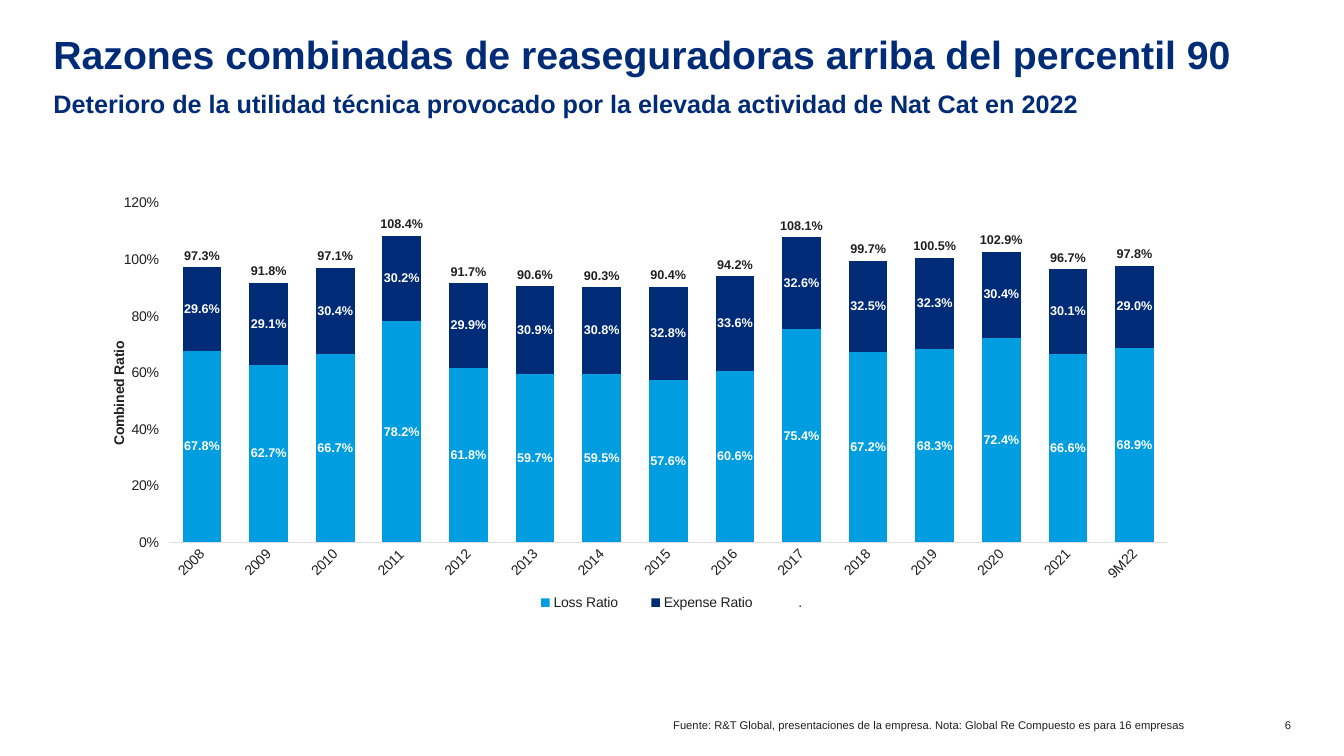
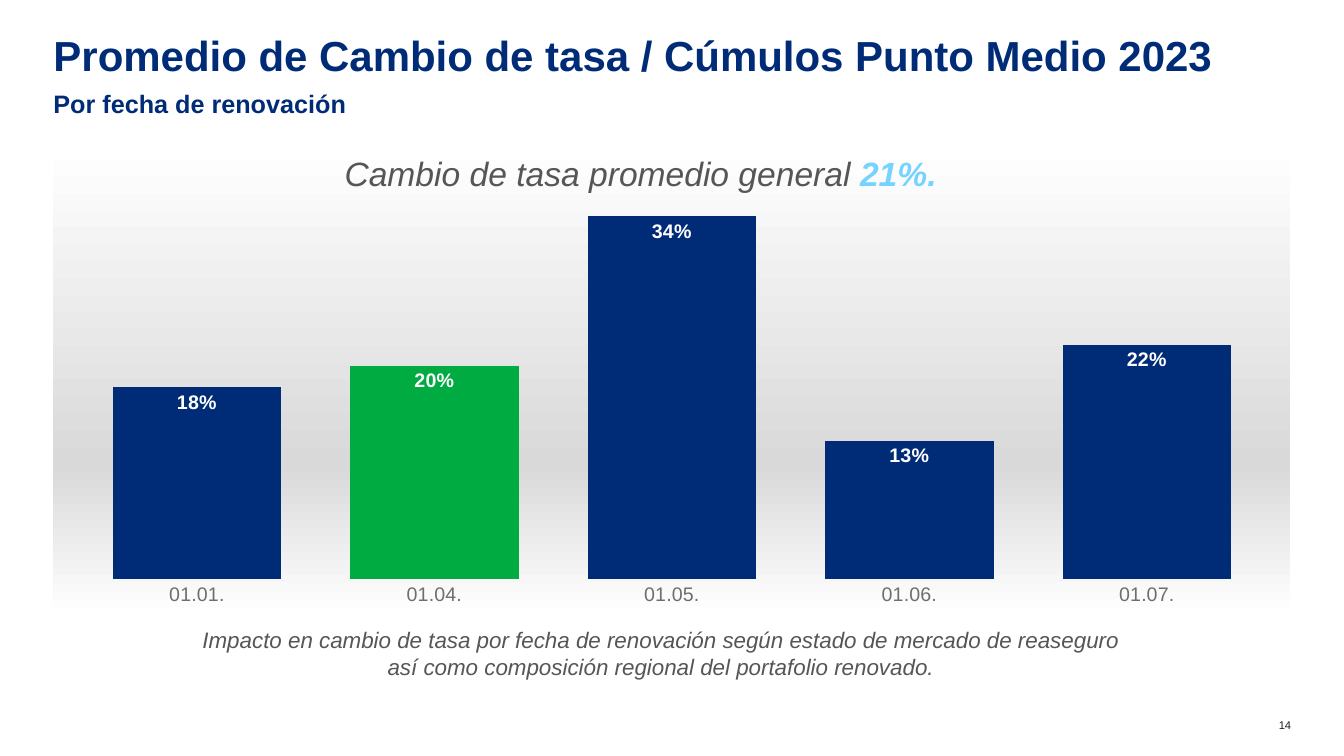
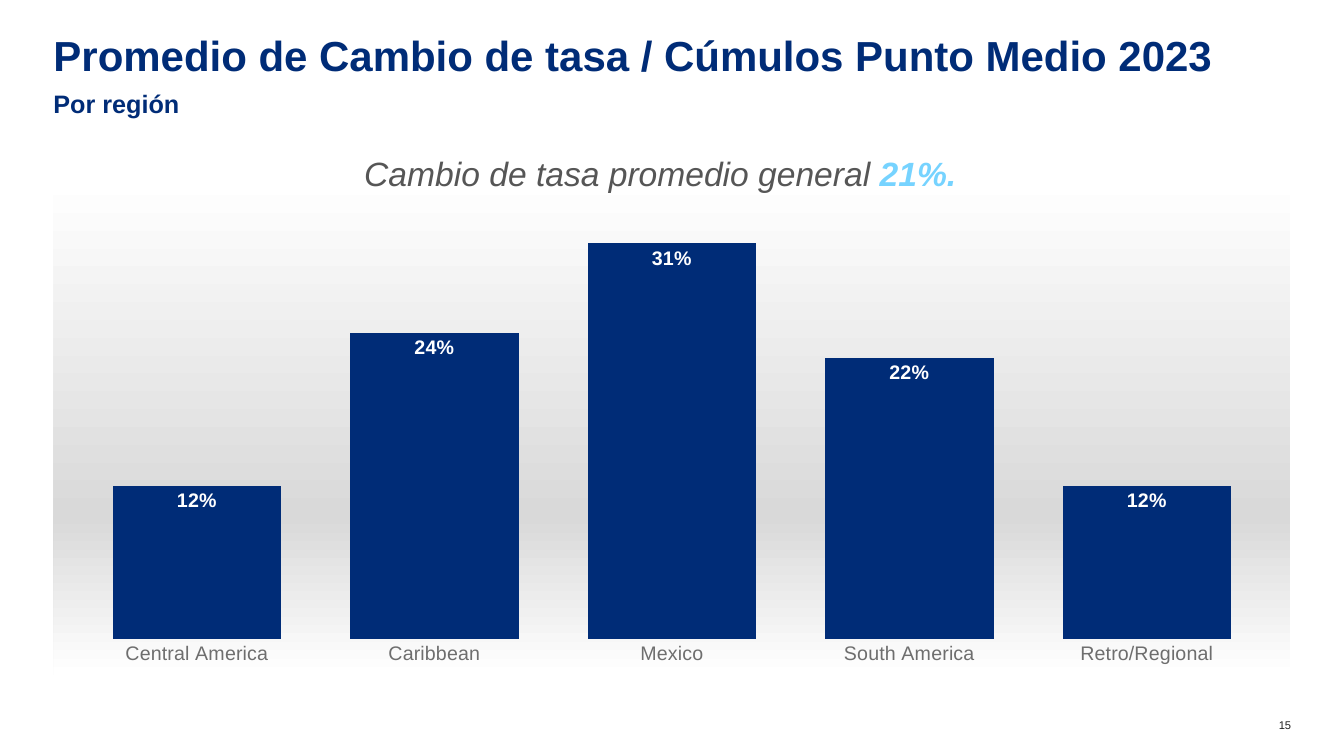
from dataclasses import dataclass
from typing import Any, NamedTuple

from lxml.etree import SubElement
from pptx import Presentation
from pptx.chart.data import CategoryChartData as ChartData
from pptx.dml.color import RGBColor as RGB
from pptx.enum.chart import XL_CHART_TYPE as CT
from pptx.enum.chart import XL_LABEL_POSITION as LP
from pptx.enum.chart import XL_LEGEND_POSITION as LEG
from pptx.enum.chart import XL_TICK_MARK as TICK
from pptx.enum.text import MSO_ANCHOR as ANCHOR
from pptx.enum.text import PP_ALIGN as ALIGN
from pptx.oxml import parse_xml
from pptx.oxml.ns import nsdecls, qn
from pptx.util import Pt


@dataclass(frozen=True)
class Theme:
    font: str = "Arial"
    navy: str = "002C77"
    sky: str = "009DE0"
    pale: str = "76D3FF"
    green: str = "00AC41"
    ink: str = "202020"
    gray: str = "565656"
    label: str = "6E6E6E"
    rule: str = "DEDEDE"
    band: str = "D9D9D9"
    white: str = "FFFFFF"
    subtitle: float = 18
    callout: float = 24
    note: float = 16
    chart: float = 14
    axis: float = 10
    value: float = 9
    small: float = 8


T = Theme()


class Box(NamedTuple):
    x: float
    y: float
    w: float
    h: float


class Run(NamedTuple):
    text: str
    size: float
    color: str
    bold: bool = False
    italic: bool = False


class Series(NamedTuple):
    name: str
    values: list[float]
    fill: str | None
    label: str
    position: Any


@dataclass(frozen=True)
class RatePage:
    number: int
    subtitle: str
    chart: Box
    plot: Box
    top: float
    callout: Box
    rates: dict[str, float]
    highlight: int | None = None
    note: str = ""


TITLE = Box(38.2, 28, 883.5, 38.9)
SUBTITLE = Box(38.2, 63.4, 884, 25.2)
NUMBER = Box(900, 513.4, 22.3, 9.4)
SOURCE = Box(473, 503.3, 373.7, 19.4)
NOTE = Box(139, 447.1, 666, 38.9)
COMBINED = Box(73.4, 129.6, 812.9, 311.8)

YEARS = [str(y) for y in range(2008, 2022)] + ["9M22"]
LOSS = [0.678, 0.627, 0.667, 0.782, 0.618, 0.597, 0.595, 0.576,
        0.606, 0.754, 0.672, 0.683, 0.724, 0.666, 0.689]
EXPENSE = [0.296, 0.291, 0.304, 0.302, 0.299, 0.309, 0.308, 0.328,
           0.336, 0.326, 0.325, 0.323, 0.304, 0.301, 0.29]
TOTAL = [0.973, 0.918, 0.971, 1.084, 0.917, 0.906, 0.903, 0.904,
         0.942, 1.081, 0.997, 1.005, 1.029, 0.967, 0.978]

RATE_TITLE = "Promedio de Cambio de tasa / Cúmulos Punto Medio 2023"
RATE_PAGES = [
    RatePage(
        14, "Por fecha de renovación",
        Box(38.2, 102.2, 883.5, 337), Box(0.02, 0.02, 0.96, 0.905), 0.4,
        Box(211.7, 109.4, 491.8, 28.8),
        {"01.01.": 0.18, "01.04.": 0.2, "01.05.": 0.34, "01.06.": 0.13, "01.07.": 0.22},
        highlight=1,
        note="Impacto en cambio de tasa por fecha de renovación según estado de "
             "mercado de reaseguro así como composición regional del portafolio renovado.",
    ),
    RatePage(
        15, "Por región",
        Box(38.2, 126.7, 883.5, 355.7), Box(0.02, 0.03, 0.96, 0.897), 0.35,
        Box(239.8, 109.4, 463.7, 28.8),
        {"Central America": 0.12, "Caribbean": 0.24, "Mexico": 0.31,
         "South America": 0.22, "Retro/Regional": 0.12},
    ),
]


def assign(obj: Any, **fmt: Any) -> None:
    for name, value in fmt.items():
        setattr(obj, name, value)


def style(font: Any, size: float, color: str, **fmt: Any) -> None:
    assign(font, name=T.font, size=Pt(size), **fmt)
    font.color.rgb = RGB.from_string(color)


def fill_with(fill: Any, color: str | None) -> None:
    if color is None:
        fill.background()
    else:
        fill.solid()
        fill.fore_color.rgb = RGB.from_string(color)


def add_text(s: Any, box: Box, *runs: Run, anchor: Any = ANCHOR.TOP, **para: Any) -> None:
    tf = s.shapes.add_textbox(*map(Pt, box)).text_frame
    assign(tf, word_wrap=True, vertical_anchor=anchor,
           margin_left=0, margin_top=0, margin_right=0, margin_bottom=0)
    p = tf.paragraphs[0]
    assign(p, **para)
    for run in runs:
        r = p.add_run()
        r.text = run.text
        style(r.font, run.size, run.color, bold=run.bold, italic=run.italic)


def add_page(prs: Any, number: int, title: str, size: float, subtitle: str) -> Any:
    s = prs.slides.add_slide(prs.slide_layouts[6])
    add_text(s, TITLE, Run(title, size, T.navy, bold=True), line_spacing=0.8)
    add_text(s, SUBTITLE, Run(subtitle, T.subtitle, T.navy, bold=True), space_after=Pt(6))
    add_text(s, NUMBER, Run(str(number), T.small, T.ink), alignment=ALIGN.RIGHT)
    return s


def place(parent: Any, index: int, target: str = "", **fractions: float) -> None:
    old = parent.find(qn("c:layout"))
    if old is not None:
        parent.remove(old)
    layout = parse_xml(f"<c:layout {nsdecls('c')}/>")
    manual = SubElement(layout, qn("c:manualLayout"))
    if target:
        SubElement(manual, qn("c:layoutTarget")).set("val", target)
    for mode in ("xMode", "yMode"):
        SubElement(manual, qn(f"c:{mode}")).set("val", "edge")
    for name, value in fractions.items():
        SubElement(manual, qn(f"c:{name}")).set("val", str(value))
    parent.insert(index, layout)


def set_background(chart: Any, stops: dict[int, str]) -> None:
    gs = "".join(f'<a:gs pos="{pos * 1000}"><a:srgbClr val="{color}"/></a:gs>'
                 for pos, color in stops.items())
    fill = (f'<a:gradFill><a:gsLst>{gs}</a:gsLst><a:lin ang="5400000" scaled="0"/></a:gradFill>'
            if stops else "<a:noFill/>")
    chart._chartSpace.find(qn("c:chart")).addnext(parse_xml(
        f"<c:spPr {nsdecls('c', 'a')}>{fill}<a:ln><a:noFill/></a:ln></c:spPr>"))


def add_columns(s: Any, kind: Any, box: Box, plot_box: Box, cats: list[str],
                series: list[Series], gap: int, top: float, size: float,
                label_size: float, label_format: str, cat_color: str,
                stops: dict[int, str]) -> Any:
    data = ChartData()
    data.categories = cats
    for item in series:
        data.add_series(item.name, item.values)
    chart = s.shapes.add_chart(kind, *map(Pt, box), data).chart
    assign(chart, has_title=False, has_legend=False)
    style(chart.font, size, T.ink)
    plot = chart.plots[0]
    assign(plot, gap_width=gap, vary_by_categories=False)
    for item, ser in zip(series, plot.series):
        fill_with(ser.format.fill, item.fill)
        labels = ser.data_labels
        assign(labels, show_value=True, number_format=label_format,
               number_format_is_linked=False, position=item.position)
        style(labels.font, label_size, item.label, bold=True)
    assign(chart.category_axis, major_tick_mark=TICK.NONE, has_major_gridlines=False)
    style(chart.category_axis.tick_labels.font, size, cat_color)
    assign(chart.value_axis, minimum_scale=0, maximum_scale=top, has_major_gridlines=False)
    assign(chart.value_axis.tick_labels, number_format="0%", number_format_is_linked=False)
    place(chart._chartSpace.chart.plotArea, 0, "inner", **plot_box._asdict())
    set_background(chart, stops)
    return chart


def combined_slide(prs: Any) -> None:
    s = add_page(prs, 6, "Razones combinadas de reaseguradoras arriba del percentil 90", 28,
                 "Deterioro de la utilidad técnica provocado por la elevada actividad "
                 "de Nat Cat en 2022")
    add_text(s, SOURCE, Run("Fuente: R&T Global, presentaciones de la empresa. "
                            "Nota: Global Re Compuesto es para 16 empresas", T.small, T.ink),
             anchor=ANCHOR.BOTTOM, alignment=ALIGN.RIGHT, space_after=Pt(6))
    series = [Series("Loss Ratio", LOSS, T.sky, T.white, LP.CENTER),
              Series("Expense Ratio", EXPENSE, T.navy, T.white, LP.CENTER),
              Series(".", TOTAL, None, T.ink, LP.INSIDE_BASE)]
    chart = add_columns(s, CT.COLUMN_STACKED, COMBINED, Box(0.058, 0.05, 0.878, 0.777),
                        YEARS, series, 72, 1.2, T.axis, T.value, "0.0%", T.ink, {})
    chart.plots[0].overlap = 100
    cat, val = chart.category_axis, chart.value_axis
    for axis, color in ((cat, T.rule), (val, T.white)):
        axis.format.line.width = Pt(0.75)
        axis.format.line.color.rgb = RGB.from_string(color)
    cat._element.find(qn("c:txPr")).find(qn("a:bodyPr")).set("rot", "-2700000")
    assign(val, major_unit=0.2, major_tick_mark=TICK.OUTSIDE)
    style(val.tick_labels.font, T.axis, T.ink)
    r = val.axis_title.text_frame.paragraphs[0].add_run()
    r.text = "Combined Ratio"
    style(r.font, T.axis, T.ink, bold=True)
    place(val.axis_title._element, 1, x=0.004, y=0.36)
    chart.has_legend = True
    assign(chart.legend, position=LEG.BOTTOM, include_in_layout=False)
    style(chart.legend.font, T.axis, T.ink)
    place(chart.legend._element, 1, x=0.36, y=0.93, w=0.28, h=0.07)


def rate_slide(prs: Any, page: RatePage) -> None:
    s = add_page(prs, page.number, RATE_TITLE, 30, page.subtitle)
    series = Series("Series 1", list(page.rates.values()), T.navy, T.white, LP.INSIDE_END)
    chart = add_columns(s, CT.COLUMN_CLUSTERED, page.chart, page.plot, list(page.rates),
                        [series], 41, page.top, T.chart, T.chart, "0%", T.label,
                        {0: T.white, 68: T.band, 100: T.white})
    chart.value_axis.visible = False
    chart.category_axis.format.line.fill.background()
    if page.highlight is not None:
        fill_with(chart.plots[0].series[0].points[page.highlight].format.fill, T.green)
    add_text(s, page.callout,
             Run("Cambio de tasa promedio general ", T.callout, T.gray, italic=True),
             Run("21%.", T.callout, T.pale, bold=True, italic=True), alignment=ALIGN.CENTER)
    if page.note:
        add_text(s, NOTE, Run(page.note, T.note, T.gray, italic=True), alignment=ALIGN.CENTER)


def main() -> None:
    prs = Presentation()
    assign(prs, slide_width=Pt(960), slide_height=Pt(540))
    combined_slide(prs)
    for page in RATE_PAGES:
        rate_slide(prs, page)
    prs.save("out.pptx")


if __name__ == "__main__":
    main()
